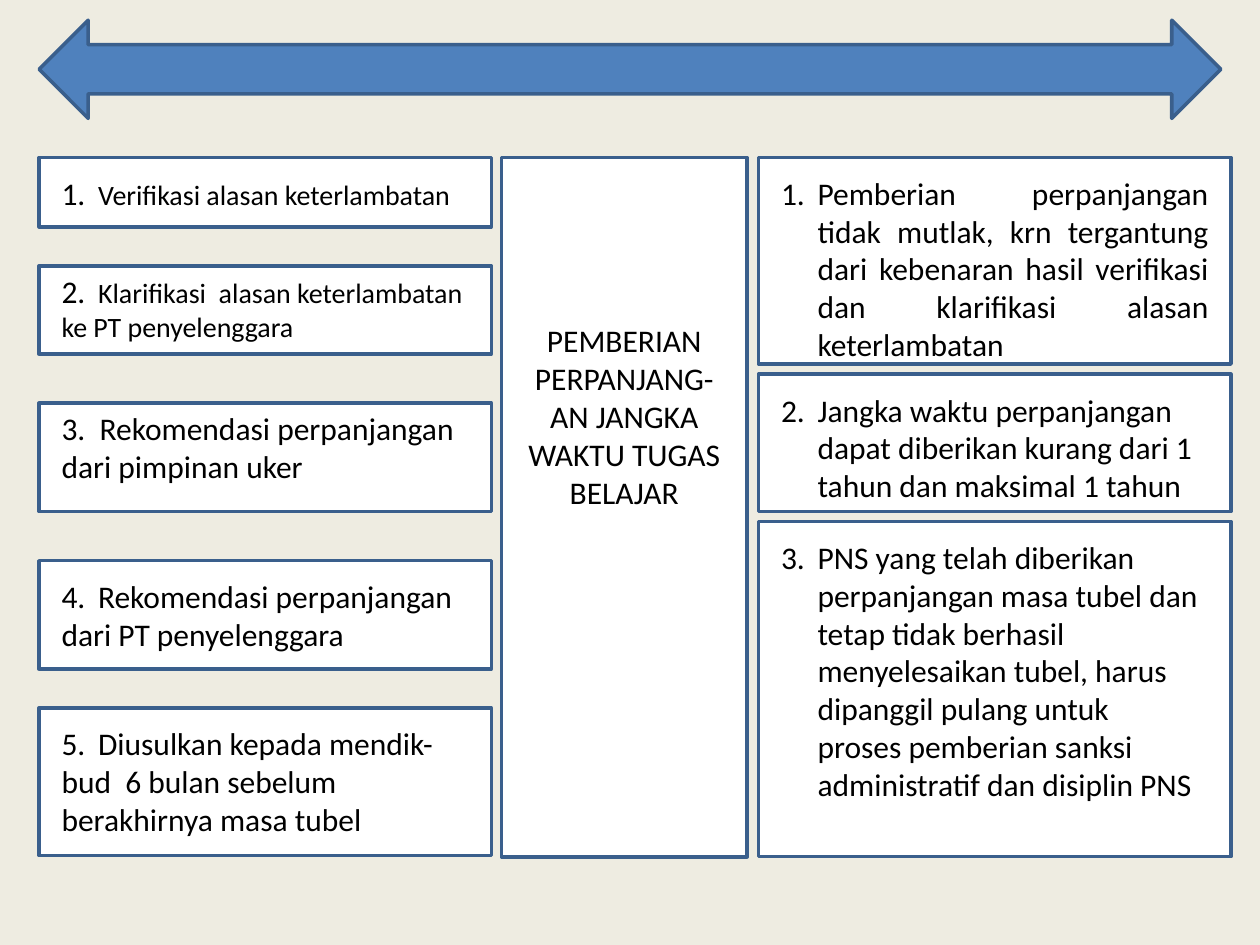
from pptx import Presentation
from pptx.dml.color import RGBColor
from pptx.enum.shapes import MSO_SHAPE as Shape
from pptx.enum.text import MSO_ANCHOR as Anchor, MSO_AUTO_SIZE as AutoSize, PP_ALIGN as Align
from pptx.oxml.ns import qn
from pptx.util import Inches, Pt
from lxml.etree import SubElement

BACKGROUND = RGBColor(0xEE, 0xEC, 0xE1)
WHITE = RGBColor(0xFF, 0xFF, 0xFF)
BLACK = RGBColor(0x00, 0x00, 0x00)
BLUE = RGBColor(0x4F, 0x81, 0xBD)
DARK_BLUE = RGBColor(0x3A, 0x5F, 0x8C)

NUMBER_WIDTH = Inches(0.29)
PADDING = 0.08
FRAME_FORMAT = {
    "word_wrap": True,
    "auto_size": AutoSize.NONE,
    "vertical_anchor": Anchor.TOP,
    "margin_left": Inches(0.1),
    "margin_right": Inches(0.1),
    "margin_top": Inches(0.05),
    "margin_bottom": Inches(0.05),
}

STEPS = [
    (1.25, 0.55, 1.33, "1.\t", "Verifikasi alasan keterlambatan", 16),
    (2.11, 0.7, 2.11, "2.\t", "Klarifikasi  alasan keterlambatan\vke PT penyelenggara", 16),
    (3.2, 0.86, 3.2, "3.  ", "Rekomendasi perpanjangan\vdari pimpinan uker", 18),
    (4.45, 0.86, 4.53, "4.\t", "Rekomendasi perpanjangan\vdari PT penyelenggara", 18),
    (5.62, 1.17, 5.7, "5.\t", "Diusulkan kepada mendik-\vbud  6 bulan sebelum\vberakhirnya masa tubel", 18),
]
RULES = [
    (1.25, 1.64, 3.59, Align.JUSTIFY,
     "Pemberian perpanjangan tidak mutlak, krn tergantung dari kebenaran "
     "hasil verifikasi dan klarifikasi alasan keterlambatan"),
    (2.97, 1.09, 3.59, Align.LEFT,
     "Jangka waktu perpanjangan dapat diberikan kurang dari 1 tahun dan maksimal 1 tahun"),
    (4.14, 2.66, 3.52, Align.LEFT,
     "PNS yang telah diberikan perpanjangan masa tubel dan tetap tidak berhasil "
     "menyelesaikan tubel, harus dipanggil pulang untuk proses pemberian sanksi "
     "administratif dan disiplin PNS"),
]


def set_attributes(target, values):
    for name, value in values.items():
        setattr(target, name, value)


def add_panel(slide, box, kind=Shape.RECTANGLE, fill=WHITE):
    shape = slide.shapes.add_shape(kind, *map(Inches, box))
    shape.shadow.inherit = False
    shape.fill.solid()
    shape.fill.fore_color.rgb = fill
    shape.line.color.rgb = DARK_BLUE
    shape.line.width = Pt(2)
    return shape


def add_run(paragraph, text, size=18):
    first, *others = text.split("\v")
    for index, part in enumerate([first, *others]):
        if index:
            paragraph.add_line_break()
        run = paragraph.add_run()
        run.text = part
        set_attributes(run.font, {"name": "Calibri", "size": Pt(size)})
        run.font.color.rgb = BLACK


def add_text(slide, box):
    text_box = slide.shapes.add_textbox(*map(Inches, box))
    set_attributes(text_box.text_frame, FRAME_FORMAT)
    return text_box.text_frame.paragraphs[0]


def add_step(slide, box, text_top, number, text, size):
    left, top, width, height = box
    add_panel(slide, box)
    paragraph = add_text(
        slide, (left + PADDING, text_top, width - 2 * PADDING, top + height - text_top))
    tab_list = SubElement(paragraph._p.get_or_add_pPr(), qn("a:tabLst"))
    SubElement(tab_list, qn("a:tab"), pos=str(NUMBER_WIDTH), algn="l")
    add_run(paragraph, number)
    add_run(paragraph, text, size)


def add_rule(slide, box, text_width, number, alignment, text):
    left, top, width, height = box
    add_panel(slide, box)
    paragraph = add_text(
        slide, (left + PADDING, top + PADDING, text_width, height - PADDING))
    paragraph.alignment = alignment
    properties = paragraph._p.get_or_add_pPr()
    properties.set("marL", str(NUMBER_WIDTH))
    properties.set("indent", str(-NUMBER_WIDTH))
    add_run(paragraph, f"{number}.\t{text}")


def add_topic(slide, box):
    left, top, width, height = box
    add_panel(slide, box)
    title = slide.shapes.title
    slide.shapes._spTree.append(title._element)
    set_attributes(title, {
        "left": Inches(left + PADDING),
        "top": Inches(top + 1.25),
        "width": Inches(width - 2 * PADDING),
        "height": Inches(1.62),
    })
    set_attributes(title.text_frame, FRAME_FORMAT)
    paragraph = title.text_frame.paragraphs[0]
    paragraph.alignment = Align.CENTER
    add_run(paragraph, "PEMBERIAN PERPANJANG-AN JANGKA WAKTU TUGAS BELAJAR")


def add_steps(slide, left, width):
    for top, height, text_top, number, text, size in STEPS:
        add_step(slide, (left, top, width, height), text_top, number, text, size)


def add_rules(slide, left, width):
    for number, (top, height, text_width, alignment, text) in enumerate(RULES, 1):
        add_rule(slide, (left, top, width, height), text_width, number, alignment, text)


def main():
    presentation = Presentation()
    set_attributes(presentation, {"slide_width": Inches(10), "slide_height": Inches(7.5)})
    slide = presentation.slides.add_slide(presentation.slide_layouts[5])
    slide.background.fill.solid()
    slide.background.fill.fore_color.rgb = BACKGROUND
    add_topic(slide, (3.98, 1.25, 1.95, 5.55))
    add_steps(slide, 0.31, 3.59)
    add_rules(slide, 6.02, 3.75)
    add_panel(slide, (0.31, 0.16, 9.38, 0.78), Shape.LEFT_RIGHT_ARROW, BLUE)
    presentation.save("out.pptx")


if __name__ == "__main__":
    main()
